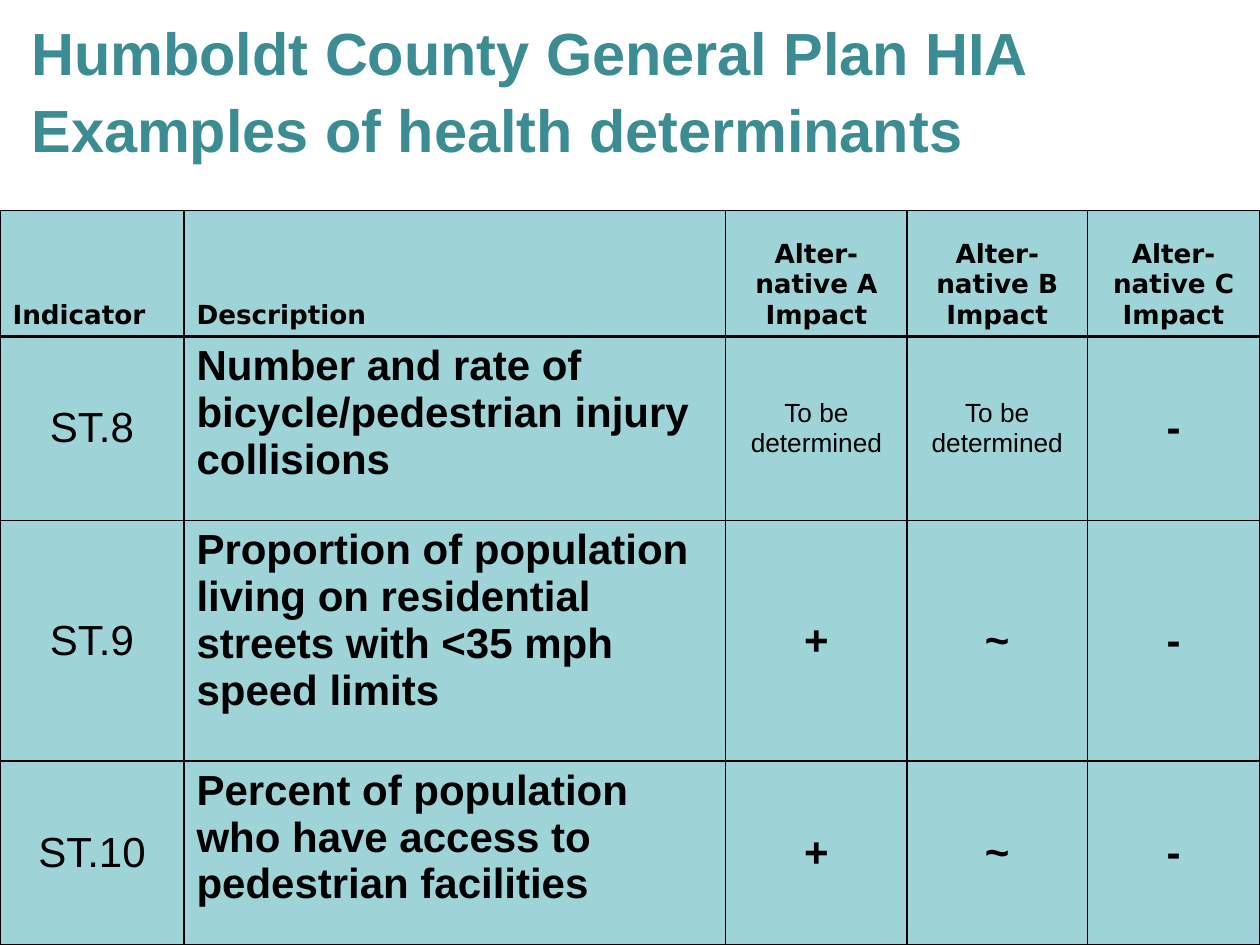
from lxml.etree import SubElement
from pptx import Presentation
from pptx.dml.color import RGBColor
from pptx.enum.text import MSO_ANCHOR, PP_ALIGN
from pptx.oxml.ns import qn
from pptx.util import Inches, Pt

TEAL, PALE_TEAL, BLACK = "3C8C93", "9ED3D7", "000000"
COLUMN_WIDTHS = [1.46, 4.3, 1.44, 1.43, 1.37]
ROW_HEIGHTS = [1, 1.46, 1.91, 1.46]
HEADINGS = ["Indicator", "Description"] + [f"Alter-native {plan} Impact" for plan in "ABC"]
PENDING = "To be determined"
INDICATORS = [
    ["ST.8", "Number and rate of bicycle/pedestrian injury collisions", PENDING, PENDING, "-"],
    ["ST.9", "Proportion of population living on residential streets with <35 mph speed limits",
     "+", "~", "-"],
    ["ST.10", "Percent of population who have access to pedestrian facilities", "+", "~", "-"],
]


def color(hex_value):
    """Turn a hex string into a colour."""
    return RGBColor.from_string(hex_value)


def write(frame, text, size=24, font="Arial", ink=BLACK, bold=True,
          align=PP_ALIGN.LEFT, spacing=1.0):
    """Put formatted text into a text frame."""
    frame.word_wrap = True
    paragraph = frame.paragraphs[0]
    paragraph.text = text
    paragraph.alignment = align
    paragraph.line_spacing = spacing
    paragraph.space_before = Pt(0)
    for run in paragraph.runs:
        run.font.size = Pt(size)
        run.font.name = font
        run.font.bold = bold
        run.font.color.rgb = color(ink)


def style_cell(cell, top=1, bottom=1):
    """Give a cell its four borders and its fill."""
    properties = cell._tc.get_or_add_tcPr()
    for side, width in (("L", 1), ("R", 1), ("T", top), ("B", bottom)):
        border = SubElement(properties, qn(f"a:ln{side}"), w=str(Pt(width)))
        fill = SubElement(border, qn("a:solidFill"))
        SubElement(fill, qn("a:srgbClr"), val=BLACK)
    cell.fill.solid()
    cell.fill.fore_color.rgb = color(PALE_TEAL)


def place_title(slide, left, top, width, height):
    """Move and format the title placeholder."""
    title = slide.shapes.title
    title.left, title.top, title.width, title.height = map(Inches, (left, top, width, height))
    frame = title.text_frame
    frame.margin_left = frame.margin_right = frame.margin_top = frame.margin_bottom = 0
    frame.vertical_anchor = MSO_ANCHOR.TOP
    write(frame, "Humboldt County General Plan HIA\vExamples of health determinants",
          size=34, ink=TEAL, spacing=1.08)


def place_indicator_table(slide, left, top, width, height):
    """Add the table of indicators and their impacts."""
    table = slide.shapes.add_table(len(ROW_HEIGHTS), len(COLUMN_WIDTHS),
                                   *map(Inches, (left, top, width, height))).table
    for column, share in zip(table.columns, COLUMN_WIDTHS):
        column.width = Inches(width * share / sum(COLUMN_WIDTHS))
    for row, share in zip(table.rows, ROW_HEIGHTS):
        row.height = Inches(height * share / sum(ROW_HEIGHTS))
    for column, heading in enumerate(HEADINGS):
        cell = table.cell(0, column)
        style_cell(cell, bottom=2.25)
        cell.vertical_anchor = MSO_ANCHOR.BOTTOM
        write(cell.text_frame, heading, size=15, font="DejaVu Sans",
              align=PP_ALIGN.CENTER if column > 1 else PP_ALIGN.LEFT)
    for row, values in enumerate(INDICATORS, start=1):
        for column, value in enumerate(values):
            cell = table.cell(row, column)
            style_cell(cell, top=2.25 if row == 1 else 1)
            is_description = column == 1
            cell.vertical_anchor = MSO_ANCHOR.TOP if is_description else MSO_ANCHOR.MIDDLE
            write(cell.text_frame, value, size=15 if value == PENDING else 24,
                  bold=column > 0 and value != PENDING,
                  align=PP_ALIGN.LEFT if is_description else PP_ALIGN.CENTER)


def main():
    """Build and save the slide."""
    deck = Presentation()
    deck.slide_width, deck.slide_height = Inches(10), Inches(7.5)
    slide = deck.slides.add_slide(deck.slide_layouts[5])
    place_title(slide, 0.25, 0.08, 9.5, 1.5)
    place_indicator_table(slide, 0, 1.67, 10, 5.83)
    deck.save("out.pptx")


if __name__ == "__main__":
    main()
